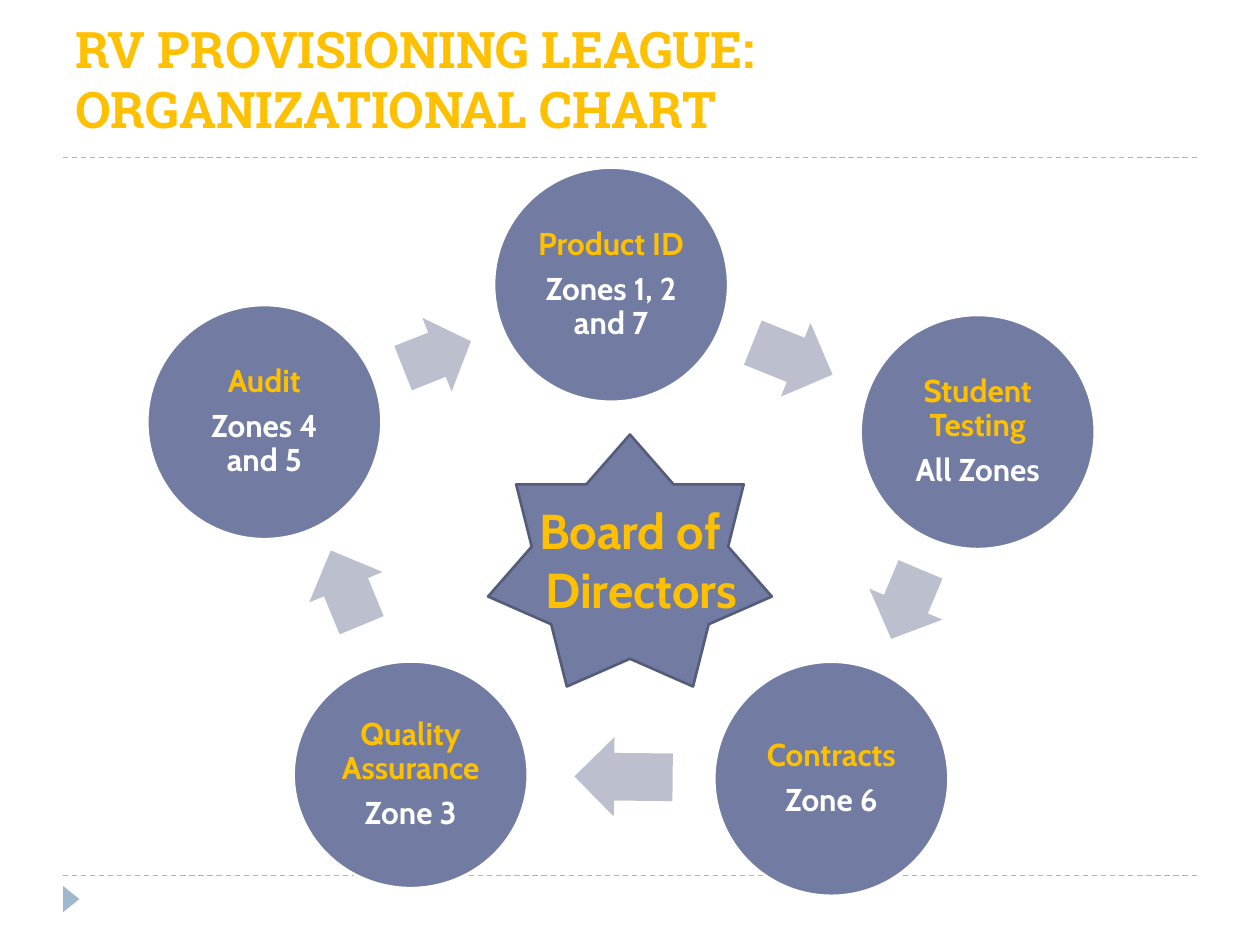
from dataclasses import dataclass
from math import atan2, degrees

from lxml import etree
from pptx import Presentation
from pptx.dml.color import RGBColor
from pptx.enum.dml import MSO_LINE
from pptx.enum.shapes import MSO_CONNECTOR, MSO_SHAPE
from pptx.enum.text import MSO_ANCHOR, PP_ALIGN
from pptx.oxml.ns import qn
from pptx.util import Cm, Pt

ELLIPSE, ARROW = MSO_SHAPE.OVAL, MSO_SHAPE.RIGHT_ARROW
STAR, TRIANGLE = MSO_SHAPE.STAR_7_POINT, MSO_SHAPE.ISOSCELES_TRIANGLE
STRAIGHT, DASH = MSO_CONNECTOR.STRAIGHT, MSO_LINE.DASH
TOP, MIDDLE, BOTTOM = MSO_ANCHOR.TOP, MSO_ANCHOR.MIDDLE, MSO_ANCHOR.BOTTOM
LEFT, CENTER = PP_ALIGN.LEFT, PP_ALIGN.CENTER


@dataclass(frozen=True)
class Theme:
    gold: str = "FFC000"
    white: str = "FFFFFF"
    node: str = "727CA3"
    star_line: str = "545C79"
    arrow: str = "BCBFCE"
    rule: str = "9FB8CD"
    title_font: str = "Roboto Slab"
    body_font: str = "Cabin"
    title_size: float = 28.8
    board_size: float = 28
    node_size: float = 18


THEME = Theme()

# Zone groups in clockwise order: name, zones, centre x, centre y, height (cm)
NODE_WIDTH = 4.72
NODES = [
    ("Product ID", "Zones 1, 2 and 7", 12.32, 5.74, 4.72),
    ("Student Testing", "All Zones", 19.71, 8.71, 4.72),
    ("Contracts", "Zone 6", 16.76, 15.7, 4.72),
    ("Quality Assurance", "Zone 3", 8.28, 15.62, 4.57),
    ("Audit", "Zones 4 and 5", 5.33, 8.51, 4.72),
]
# Arrow leaving each node: centre x, centre y, length (cm)
ARROW_HEIGHT = 1.6
ARROWS = [(15.98, 7.23, 1.73), (18.26, 12.18, 1.52), (12.57, 15.66, 1.98),
          (6.98, 11.85, 1.63), (8.81, 7.15, 1.47)]


def rgb(value):
    return RGBColor.from_string(value)


def set_attrs(obj, **values):
    for name, value in values.items():
        setattr(obj, name, value)


def add_shape(slide, kind, box, fill, line=None):
    sp = slide.shapes.add_shape(kind, *map(Cm, box))
    sp.shadow.inherit = False
    sp.fill.solid()
    sp.fill.fore_color.rgb = rgb(fill)
    if line:
        sp.line.color.rgb = rgb(line)
        sp.line.width = Pt(1.5)
    else:
        sp.line.fill.background()
    return sp


def add_rule(slide, x, y, width):
    ln = slide.shapes.add_connector(STRAIGHT, Cm(x), Cm(y), Cm(x + width), Cm(y))
    ln.line.color.rgb = rgb(THEME.rule)
    set_attrs(ln.line, width=Pt(0.75), dash_style=DASH)
    etree.SubElement(ln._element.spPr, qn("a:effectLst"))


def write(tf, lines, font, size, align=CENTER, **para):
    """Write (text, colour) pairs, one paragraph each."""
    for i, (text, color) in enumerate(lines):
        p = tf.paragraphs[0] if i == 0 else tf.add_paragraph()
        set_attrs(p, alignment=align, **para)
        r = p.add_run()
        r.text = text
        set_attrs(r.font, name=font, size=Pt(size), bold=True)
        r.font.color.rgb = rgb(color)


def add_text_box(slide, box, anchor):
    tf = slide.shapes.add_textbox(*map(Cm, box)).text_frame
    set_attrs(tf, word_wrap=True, vertical_anchor=anchor)
    return tf


def frame(slide, x, y, width, height):
    """Dashed rules above and below the content, with a page marker."""
    add_rule(slide, x, y + height, width)
    add_rule(slide, x, y, width)
    marker = add_shape(slide, TRIANGLE, (x - 0.1, y + height + 0.31, 0.53, 0.33),
                       THEME.rule)
    marker.rotation = 90


def cycle(slide, left, top):
    """Ring of zone groups, each with an arrow pointing towards the next."""
    for i, (name, zones, x, y, height) in enumerate(NODES):
        sp = add_shape(slide, ELLIPSE,
                       (left + x - NODE_WIDTH / 2, top + y - height / 2,
                        NODE_WIDTH, height), THEME.node, THEME.white)
        tf = sp.text_frame
        inset = Cm(0.08)
        set_attrs(tf, word_wrap=True, vertical_anchor=MIDDLE, margin_left=inset,
                  margin_right=inset, margin_top=inset, margin_bottom=inset)
        write(tf, [(name, THEME.gold), (zones, THEME.white)], THEME.body_font,
              THEME.node_size, line_spacing=0.9, space_after=Pt(6.3))

        next_x, next_y = NODES[(i + 1) % len(NODES)][2:4]
        ax, ay, length = ARROWS[i]
        arrow = add_shape(slide, ARROW,
                          (left + ax - length / 2, top + ay - ARROW_HEIGHT / 2,
                           length, ARROW_HEIGHT), THEME.arrow)
        arrow.adjustments[0] = 0.6
        arrow.rotation = degrees(atan2(next_y - y, next_x - x)) % 360


def board(slide, x, y, width, height):
    """Central star with its label, which is wider than the star's core."""
    add_shape(slide, STAR, (x, y, width, height), THEME.node, THEME.star_line)
    tf = add_text_box(slide, (x - 0.65, y + 1.2, width + 1.3, 3), TOP)
    write(tf, [("Board of", THEME.gold), ("Directors", THEME.gold)],
          THEME.body_font, THEME.board_size)
    tf.paragraphs[1]._p.get_or_add_pPr().set("marL", str(Cm(0.45)))


def title(slide, *box):
    tf = add_text_box(slide, box, BOTTOM)
    write(tf, [("RV PROVISIONING LEAGUE: ORGANIZATIONAL CHART", THEME.gold)],
          THEME.title_font, THEME.title_size, LEFT)


def main():
    prs = Presentation()
    set_attrs(prs, slide_width=Cm(25.4), slide_height=Cm(19.05))
    slide = prs.slides.add_slide(prs.slide_layouts[6])
    frame(slide, 1.27, 3.17, 22.86, 14.48)
    cycle(slide, 0, 0)
    board(slide, 9.84, 8.76, 5.72, 5.08)
    title(slide, 1.27, 0.43, 22.86, 2.49)
    prs.save("out.pptx")


if __name__ == "__main__":
    main()
